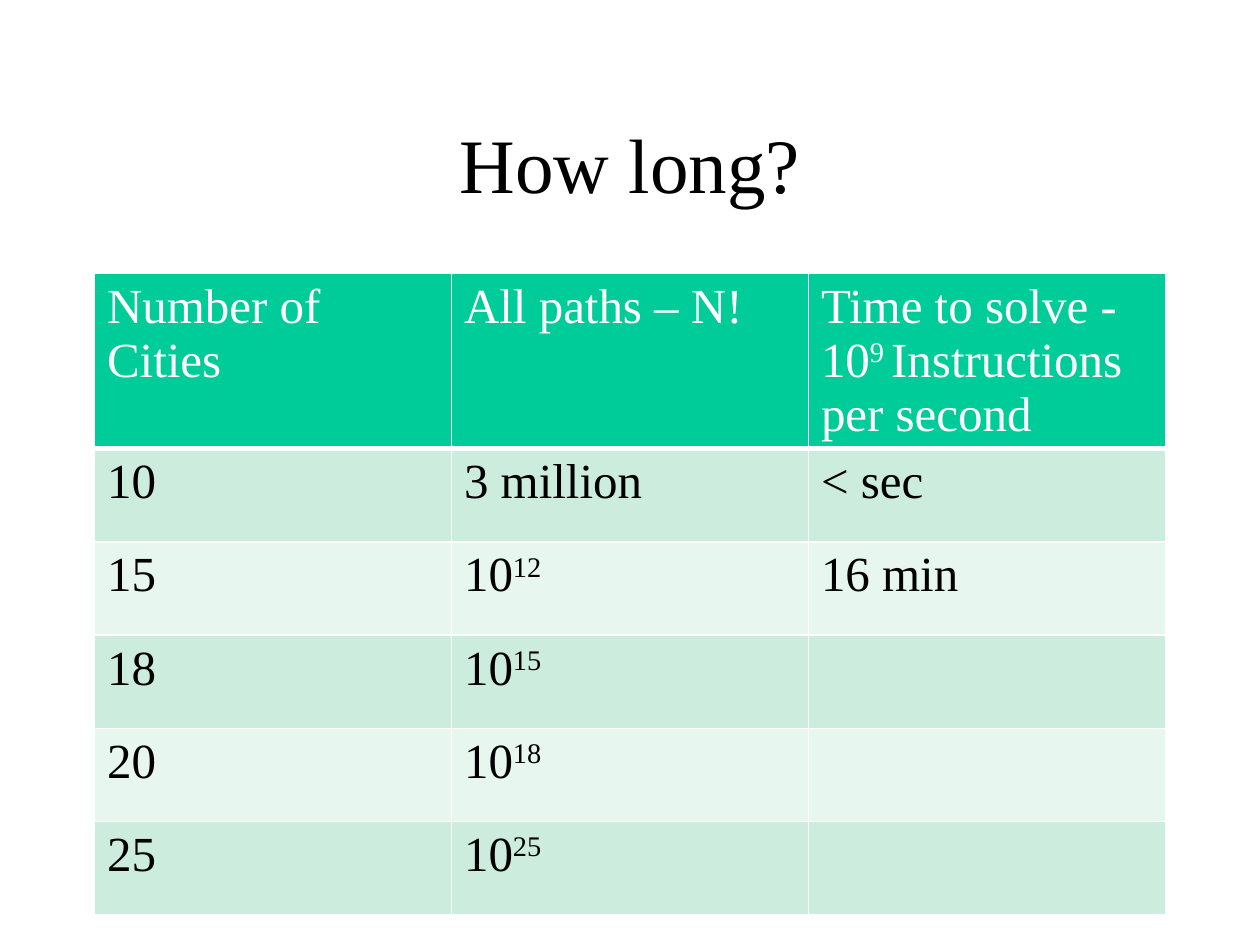
from dataclasses import dataclass

from lxml.etree import SubElement
from pptx import Presentation
from pptx.dml.color import RGBColor
from pptx.enum.text import MSO_ANCHOR, PP_ALIGN
from pptx.oxml.ns import qn
from pptx.util import Inches, Pt

FONT = "Times New Roman"
WHITE = "FFFFFF"
BLACK = "000000"
HEADER_FILL = "00CC99"
BAND_FILLS = ("CCECDE", "E7F6EF")
ROW_HEIGHT = 0.74


@dataclass(frozen=True)
class Piece:
    text: str
    raised: bool = False


Line = tuple[Piece, ...]


@dataclass(frozen=True)
class CellStyle:
    fill: str
    text: str
    bottom_border: float = 1


def plain(text: str) -> list[Line]:
    return [(Piece(text),)]


def power(exponent: str) -> list[Line]:
    return [(Piece("10"), Piece(exponent, raised=True))]


HEADINGS = [
    plain("Number of Cities"),
    plain("All paths – N!"),
    [
        (Piece("Time to solve -"),),
        (Piece("10"), Piece("9 ", raised=True), Piece("Instructions per second")),
    ],
]
BODY = [
    [plain("10"), plain("3 million"), plain("< sec")],
    [plain("15"), power("12"), plain("16 min")],
    [plain("18"), power("15"), []],
    [plain("20"), power("18"), []],
    [plain("25"), power("25"), []],
]


def color(value: str) -> RGBColor:
    return RGBColor.from_string(value)


def format_run(run, size: float, text_color: str) -> None:
    run.font.name = FONT
    run.font.size = Pt(size)
    run.font.bold = False
    run.font.color.rgb = color(text_color)


def add_border(cell, side: str, width: float) -> None:
    properties = cell._tc.get_or_add_tcPr()
    line = SubElement(properties, qn(f"a:ln{side}"), w=str(Pt(width)))
    fill = SubElement(line, qn("a:solidFill"))
    SubElement(fill, qn("a:srgbClr"), val=WHITE)


def fill_cell(cell, lines: list[Line], style: CellStyle) -> None:
    for side in "LRT":
        add_border(cell, side, 1)
    add_border(cell, "B", style.bottom_border)
    cell.fill.solid()
    cell.fill.fore_color.rgb = color(style.fill)
    frame = cell.text_frame
    for index, line in enumerate(lines):
        para = frame.add_paragraph() if index else frame.paragraphs[0]
        for piece in line:
            span = para.add_run()
            span.text = piece.text
            format_run(span, 28, style.text)
            if piece.raised:
                span._r.get_or_add_rPr().set("baseline", "30000")


def add_title(page, text: str) -> None:
    title = page.shapes.title
    title.left, title.top = Inches(0.75), Inches(0.67)
    title.width, title.height = Inches(8.5), Inches(1.25)
    frame = title.text_frame
    frame.text = text
    frame.vertical_anchor = MSO_ANCHOR.MIDDLE
    para = frame.paragraphs[0]
    para.alignment = PP_ALIGN.CENTER
    format_run(para.runs[0], 44, BLACK)


def add_times_table(page) -> None:
    rows = [HEADINGS, *BODY]
    table = page.shapes.add_table(
        len(rows), len(HEADINGS), Inches(0.75), Inches(2.17),
        Inches(8.5), Inches(ROW_HEIGHT * len(rows)),
    ).table
    table.first_row = False
    table.horz_banding = False
    for row_index, row in enumerate(rows):
        table.rows[row_index].height = Inches(ROW_HEIGHT)
        if row_index == 0:
            style = CellStyle(HEADER_FILL, WHITE, bottom_border=3)
        else:
            style = CellStyle(BAND_FILLS[(row_index - 1) % 2], BLACK)
        for column_index, lines in enumerate(row):
            fill_cell(table.cell(row_index, column_index), lines, style)


def main() -> None:
    deck = Presentation()
    deck.slide_width, deck.slide_height = Inches(10), Inches(7.5)
    page = deck.slides.add_slide(deck.slide_layouts.get_by_name("Title Only"))
    add_title(page, "How long?")
    add_times_table(page)
    deck.save("out.pptx")


if __name__ == "__main__":
    main()
